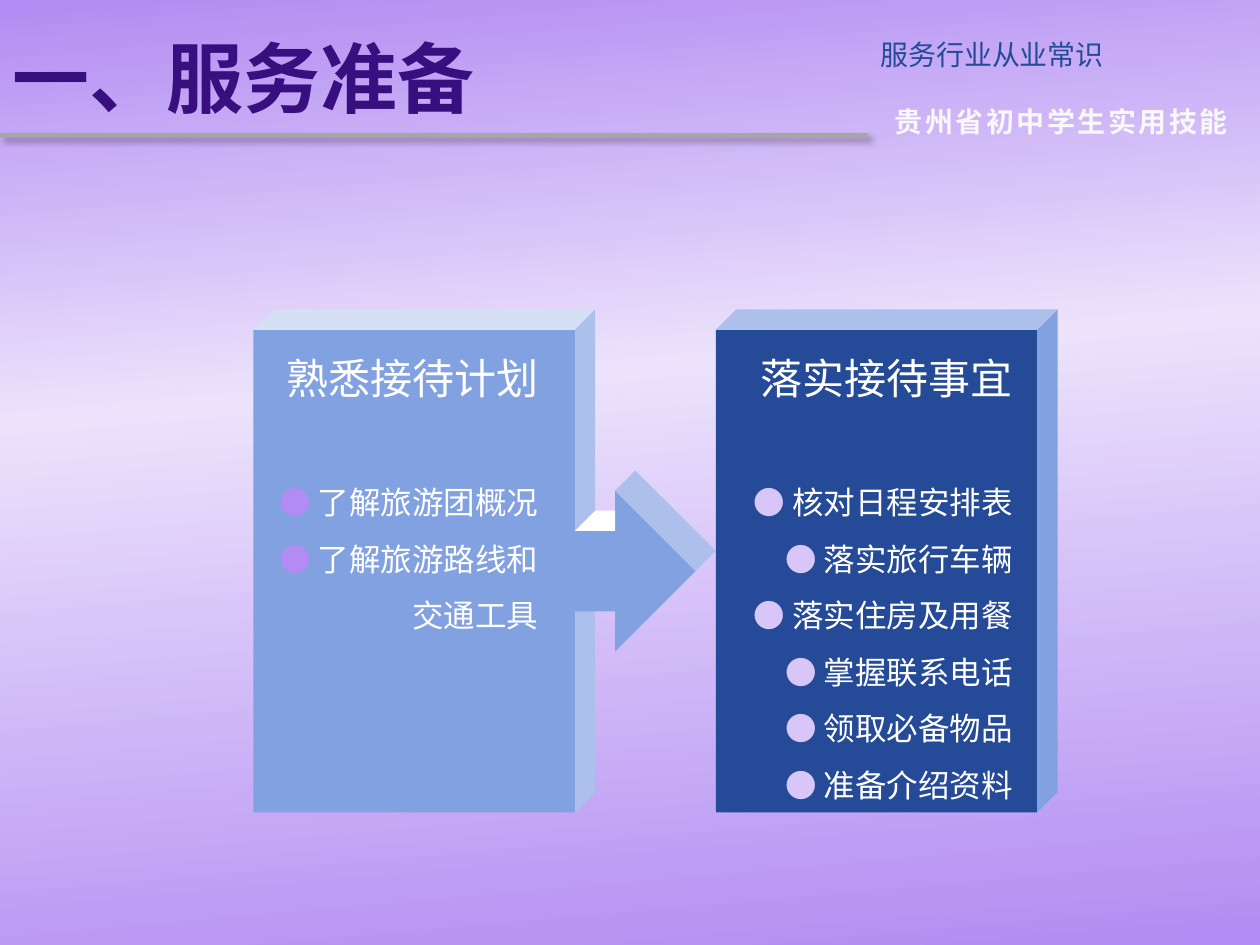
import copy

import lxml.etree
import pptx
import pptx.dml.color
import pptx.enum.shapes
import pptx.enum.text
import pptx.oxml
import pptx.oxml.ns
import pptx.util

Cm, Pt = pptx.util.Cm, pptx.util.Pt
RGB = pptx.dml.color.RGBColor.from_string
qn = pptx.oxml.ns.qn
ALIGN = pptx.enum.text.PP_ALIGN
ANCHOR = pptx.enum.text.MSO_ANCHOR
FIT = pptx.enum.text.MSO_AUTO_SIZE

CJK, LATIN = "Noto Sans CJK SC", "Calibri"
COLORS = {
    "lilac": "B28CF2", "mist": "ECE2FC", "lavender": "D8C6F8", "purple": "380F7F",
    "navy": "254A97", "blue": "82A1E1", "sky": "ACC0EB", "ice": "D5E0F5",
    "white": "FFFFFF", "offwhite": "F8F8F8", "gray": "A6A6A6",
}


def add_polygon(shapes, points, color):
    """Draw a closed, borderless outline through points given in cm."""
    start, *rest = [(Cm(x), Cm(y)) for x, y in points]
    builder = shapes.build_freeform(*start)
    builder.add_line_segments(rest, close=True)
    sp = builder.convert_to_shape()
    sp.shadow.inherit = False
    sp.fill.solid()
    sp.fill.fore_color.rgb = RGB(COLORS[color])
    sp.line.fill.background()


def add_text(box, paragraphs, frame_format):
    """Add a text box from (paragraph format, runs); a run is (text, color, font format)."""
    sp = s.shapes.add_textbox(*[Cm(v) for v in box])
    tf = sp.text_frame
    for name, value in {"word_wrap": True, **frame_format}.items():
        setattr(tf, name, value)
    for i, (paragraph_format, runs) in enumerate(paragraphs):
        p = tf.add_paragraph() if i else tf.paragraphs[0]
        for name, value in paragraph_format.items():
            setattr(p, name, value)
        for text, color, font_format in runs:
            r = p.add_run()
            r.text = text
            for name, value in {"name": CJK, **font_format}.items():
                setattr(r.font, name, value)
            r.font.color.rgb = RGB(COLORS[color])
            ea = lxml.etree.SubElement(r._r.get_or_add_rPr(), qn("a:ea"))
            ea.set("typeface", CJK)
    return sp


prs = pptx.Presentation()
prs.slide_width, prs.slide_height = Cm(25.4), Cm(19.05)
s = prs.slides.add_slide(prs.slide_layouts[6])

# Background gradient
fill = s.background.fill
fill.gradient()
fill.gradient_angle = 275
gs_list = s.element.find(".//" + qn("a:gsLst"))
gs_list.insert(1, copy.deepcopy(gs_list[0]))
for stop, (position, color) in zip(
        fill.gradient_stops, [(0, "lilac"), (0.4, "mist"), (1, "lilac")]):
    stop.position = position
    stop.color.rgb = RGB(COLORS[color])

# Rule under the title
rule = s.shapes.add_connector(
    pptx.enum.shapes.MSO_CONNECTOR.STRAIGHT, 0, Cm(2.72), Cm(17.5), Cm(2.72))
rule.line.width = Pt(2.25)
rule.line.color.rgb = RGB(COLORS["gray"])
rule.element.spPr.append(pptx.oxml.parse_xml(
    '<a:effectLst xmlns:a="http://schemas.openxmlformats.org/drawingml/2006/main">'
    '<a:outerShdw blurRad="50800" dist="38100" dir="2700000" algn="tl" rotWithShape="0">'
    '<a:srgbClr val="000000"><a:alpha val="40000"/></a:srgbClr>'
    '</a:outerShdw></a:effectLst>'))

# Header texts
grow = {"auto_size": FIT.SHAPE_TO_FIT_TEXT}
course = add_text(
    (17.7, 1.93, 7.39, 0.94),
    [({"alignment": ALIGN.CENTER, "line_spacing": Pt(20.6)},
      [("贵州省初中学生实用技能", "offwhite", {"size": Pt(16), "bold": True})])], grow)
course.text_frame.paragraphs[0].runs[0]._r.get_or_add_rPr().set("spc", "150")
add_text(
    (17.5, 0.58, 7.9, 0.94),
    [({"alignment": ALIGN.JUSTIFY, "line_spacing": Pt(20.6)},
      [("服务行业从业常识", "navy", {"size": Pt(16)})])], grow)
add_text(
    (0, 0.13, 17.5, 2.59),
    [({"line_spacing": Pt(60)},
      [("一、服务准备", "purple", {"size": Pt(44), "bold": True})])],
    {"vertical_anchor": ANCHOR.MIDDLE})

# Two blocks with a top and a right side
top, width, height, depth = 6.65, 6.48, 9.73, 0.41
left_plan, left_tasks = 5.11, 14.43
bottom, back = top + height, top - depth
for left, front, lid, side in [(left_tasks, "navy", "sky", "blue"),
                               (left_plan, "blue", "ice", "sky")]:
    right = left + width
    shapes = s.shapes.add_group_shape().shapes
    sp = shapes.add_shape(pptx.enum.shapes.MSO_SHAPE.RECTANGLE,
                          Cm(left), Cm(top), Cm(width), Cm(height))
    sp.shadow.inherit = False
    sp.fill.solid()
    sp.fill.fore_color.rgb = RGB(COLORS[front])
    sp.line.fill.background()
    add_polygon(shapes, [(left, top), (left + depth, back),
                         (right + depth, back), (right, top)], lid)
    add_polygon(shapes, [(right + depth, back), (right + depth, bottom - depth),
                         (right, bottom), (right, top)], side)

# Arrow from the first block to the second
tail, tip = left_plan + width, left_tasks - depth
middle, shaft, head = top + height / 2, 0.81, 1.62
neck = tail + shaft
shapes = s.shapes.add_group_shape().shapes
add_polygon(shapes, [(tail, middle + shaft), (neck, middle + shaft), (neck, middle + head),
                     (tip, middle), (neck, middle - head), (neck, middle - shaft),
                     (tail, middle - shaft)], "blue")
add_polygon(shapes, [(neck, middle - head), (neck + depth, middle - head - depth),
                     (tip + depth, middle - depth), (tip, middle)], "sky")
add_polygon(shapes, [(neck, middle - shaft - depth), (tail + depth, middle - shaft - depth),
                     (tail, middle - shaft), (neck, middle - shaft)], "white")

# Block texts
heading_format = {"alignment": ALIGN.RIGHT, "line_spacing": Pt(31), "space_after": Pt(35)}
item_format = {"alignment": ALIGN.RIGHT, "line_spacing": Pt(32.3)}
for left, text_height, dot, heading, items in [
    (left_plan, 6.81, "lilac", "熟悉接待计划",
     ["了解旅游团概况", "了解旅游路线和交通工具"]),
    (14.68, 10.26, "lavender", "落实接待事宜",
     ["核对日程安排表", "落实旅行车辆", "落实住房及用餐",
      "掌握联系电话", "领取必备物品", "准备介绍资料"]),
]:
    paragraphs = [(heading_format, [(heading, "white", {"size": Pt(24)})])]
    for item in items:
        paragraphs.append((item_format, [
            ("● ", dot, {"size": Pt(18), "name": LATIN}),
            (item, "white", {"size": Pt(18)})]))
    add_text((left, 6.91, 5.99, text_height), paragraphs, grow)

prs.save("out.pptx")
